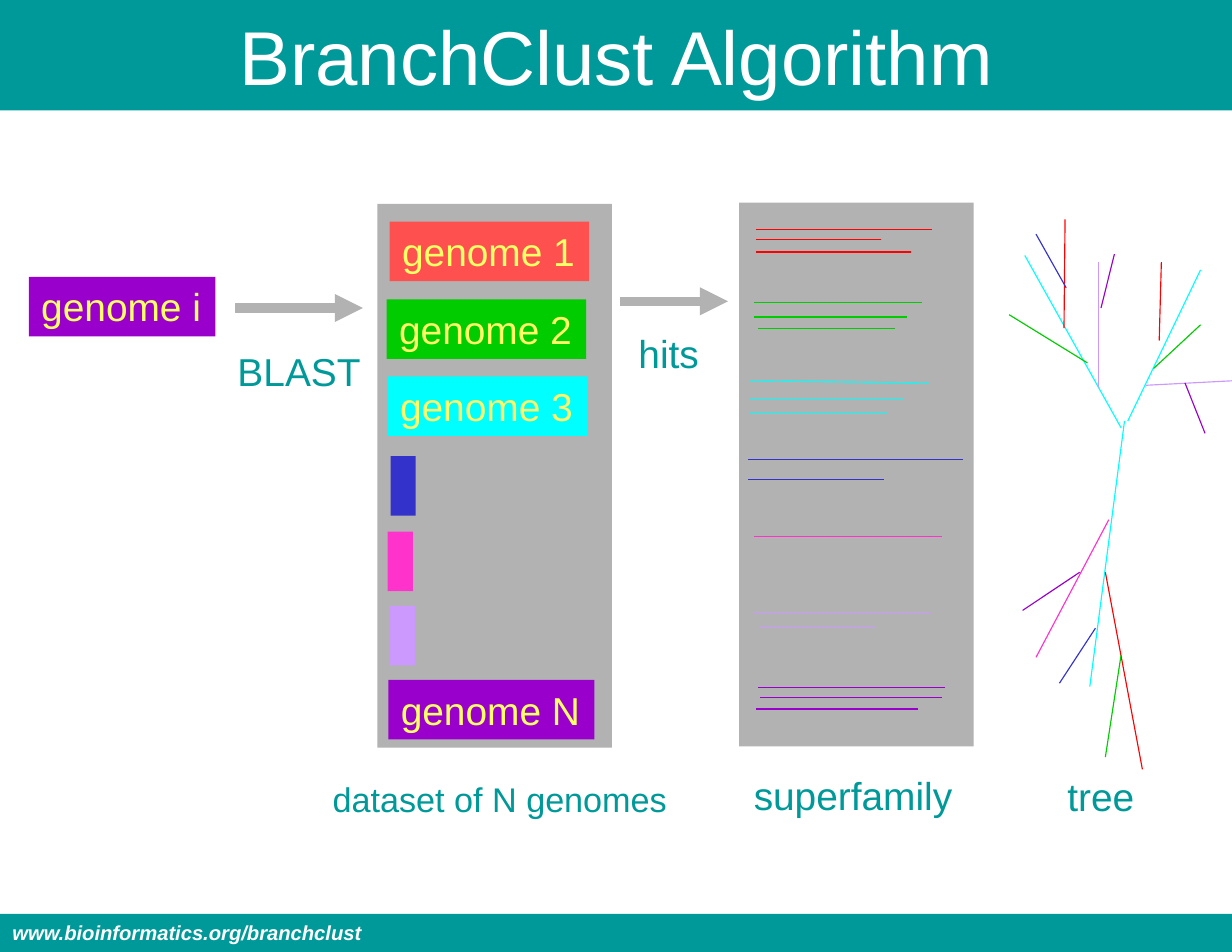
from dataclasses import dataclass

from lxml.etree import SubElement
from pptx import Presentation
from pptx.dml.color import RGBColor
from pptx.enum.shapes import MSO_CONNECTOR, MSO_SHAPE
from pptx.enum.text import MSO_ANCHOR, PP_ALIGN
from pptx.oxml.ns import qn
from pptx.util import Pt


@dataclass(frozen=True)
class Theme:
    font: str = "Arial"
    teal: str = "009999"
    white: str = "FFFFFF"
    gray: str = "B2B2B2"
    yellow: str = "FFFF66"
    coral: str = "FF5050"
    red: str = "FF0000"
    green: str = "00CC00"
    cyan: str = "00FFFF"
    blue: str = "3333CC"
    pink: str = "FF33CC"
    lavender: str = "CC99FF"
    purple: str = "9900CC"
    title_size: int = 49
    body_size: int = 25
    caption_size: int = 22
    footer_size: int = 13


theme = Theme()


def write_text(box, text, color, size=theme.body_size, bold=False, italic=False,
               align=PP_ALIGN.LEFT, anchor=MSO_ANCHOR.TOP, wrap=False):
    frame = box.text_frame
    frame.word_wrap = wrap
    frame.vertical_anchor = anchor
    frame.margin_left = frame.margin_right = Pt(8)
    frame.margin_top = frame.margin_bottom = Pt(4)
    para = frame.paragraphs[0]
    para.alignment = align
    span = para.add_run()
    span.text = text
    span.font.name = theme.font
    span.font.size = Pt(size)
    span.font.bold = bold
    span.font.italic = italic
    span.font.color.rgb = RGBColor.from_string(color)


def add_line(start, end, color, width=0.75, arrow=False):
    line = page.shapes.add_connector(
        MSO_CONNECTOR.STRAIGHT, *(Pt(value) for value in (*start, *end)))
    line.line.color.rgb = RGBColor.from_string(color)
    line.line.width = Pt(width)
    if arrow:
        SubElement(line.line._get_or_add_ln(), qn("a:tailEnd"), type="triangle")
    SubElement(line._element.spPr, qn("a:effectLst"))


deck = Presentation()
deck.slide_width, deck.slide_height = Pt(792), Pt(612)
page = deck.slides.add_slide(deck.slide_layouts[5])

title = page.shapes.title
title.left, title.top, title.width, title.height = Pt(0), Pt(0), Pt(792), Pt(71)
title.fill.solid()
title.fill.fore_color.rgb = RGBColor.from_string(theme.teal)
write_text(title, "BranchClust Algorithm", theme.white, size=theme.title_size,
           align=PP_ALIGN.CENTER, anchor=MSO_ANCHOR.MIDDLE, wrap=True)

# Filled boxes: left, top, width, height, fill, text
box_height = 38.3
boxes = [
    (242.6, 131, 150.8, 349.6, theme.gray, ""),
    (475.2, 130.3, 150.8, 349.6, theme.gray, ""),
    (18.5, 178, 120, box_height, theme.purple, "genome i"),
    (250.5, 142.4, 128.2, box_height, theme.coral, "genome 1"),
    (248.6, 192.4, 128.2, box_height, theme.green, "genome 2"),
    (249.2, 242, 128.2, box_height, theme.cyan, "genome 3"),
    (251.1, 293.2, 16.2, box_height, theme.blue, ""),
    (249.2, 341.7, 16.2, box_height, theme.pink, ""),
    (250.6, 389.5, 16.2, box_height, theme.lavender, ""),
    (249.7, 437.1, 132.5, box_height, theme.purple, "genome N"),
    (0, 587.5, 792, 24.5, theme.teal, "www.bioinformatics.org/branchclust"),
]
for *place, fill, text in boxes:
    box = page.shapes.add_shape(MSO_SHAPE.RECTANGLE, *(Pt(value) for value in place))
    box.shadow.inherit = False
    box.fill.solid()
    box.fill.fore_color.rgb = RGBColor.from_string(fill)
    box.line.fill.background()
    if fill == theme.teal:
        write_text(box, text, theme.white, size=theme.footer_size,
                   bold=True, italic=True, wrap=True)
    elif text:
        write_text(box, text, theme.yellow)

# Labels: left, top, width, text, size
labels = [
    (144.7, 219.6, 95.8, "BLAST", theme.body_size),
    (402.5, 208.1, 55.4, "hits", theme.body_size),
    (205.9, 496.1, 233.3, "dataset of N genomes", theme.caption_size),
    (476.6, 491.8, 145.4, "superfamily", theme.body_size),
    (678.2, 492.5, 59.8, "tree", theme.body_size),
]
for left, top, width, text, size in labels:
    label = page.shapes.add_textbox(Pt(left), Pt(top), Pt(width), Pt(box_height))
    write_text(label, text, theme.teal, size=size)

for left, right, y in [(151.2, 233.3, 198), (398.9, 468, 193.7)]:
    add_line((left, y), (right, y), theme.gray, width=6, arrow=True)

# Hits of each genome: left, right, y
hits = {
    theme.red: [(486, 599, 147.6), (486, 566.6, 154.1), (486, 585.4, 162)],
    theme.green: [(484.6, 592.6, 194.4), (484.6, 583.2, 203.8), (487.4, 575.3, 211)],
    theme.cyan: [(482.4, 580.3, 256.3), (482.4, 570.2, 265.7)],
    theme.blue: [(481, 619.2, 295.2), (481, 568.1, 308.2)],
    theme.pink: [(484.6, 605.5, 344.9)],
    theme.lavender: [(483.8, 598.3, 393.8), (488.9, 563, 403.2)],
    theme.purple: [(487.4, 607.7, 442.1), (488.9, 605.5, 448.6), (486, 590.4, 455.8)],
}
for color, rows in hits.items():
    for left, right, y in rows:
        add_line((left, y), (right, y), color)
add_line((482.4, 244.8), (596.9, 246.2), theme.cyan)

# Tree branches: start point, end point
branches = {
    theme.cyan: [((771.8, 173.5), (725, 270.7)), ((722.9, 270.7), (700.6, 441.4)),
                 ((720.7, 275), (658.8, 164.2))],
    theme.red: [((684.7, 141.1), (684, 211)), ((710.6, 367.9), (734.4, 494.6)),
                ((745.2, 218.9), (746.6, 168.5))],
    theme.green: [((648.7, 202.3), (699.1, 233.3)), ((741.6, 236.9), (771.8, 208.8)),
                  ((720.7, 421.2), (710.6, 486.7))],
    theme.blue: [((666, 150.5), (685.4, 185)), ((704.2, 403.9), (681.1, 439.2))],
    theme.pink: [((712.8, 334.1), (666, 422.6))],
    theme.lavender: [((736.6, 247.7), (792, 244.8)), ((706.3, 168.5), (706.3, 249.1))],
    theme.purple: [((694.1, 367.9), (657.4, 392.4)), ((761.8, 246.2), (774.7, 278.6)),
                   ((716.4, 163.4), (707.8, 198))],
}
for color, segments in branches.items():
    for start, end in segments:
        add_line(start, end, color)

deck.save("out.pptx")
